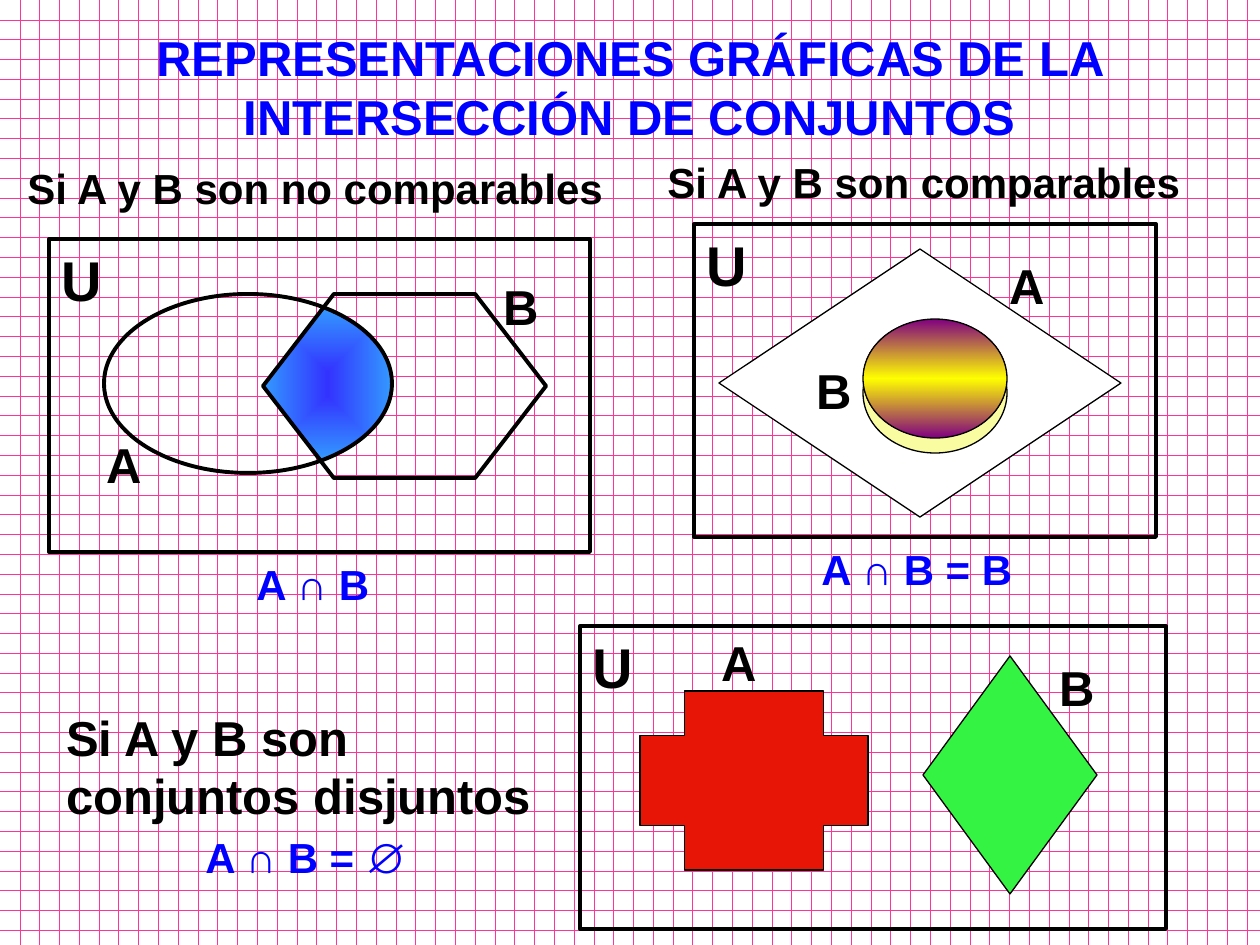
from dataclasses import dataclass
from math import cos, radians, sin

from pptx import Presentation
from pptx.dml.color import RGBColor
from pptx.enum.dml import MSO_PATTERN
from pptx.enum.shapes import MSO_SHAPE
from pptx.enum.text import MSO_ANCHOR, MSO_AUTO_SIZE, PP_ALIGN
from pptx.oxml import parse_xml
from pptx.oxml.ns import nsdecls, qn
from pptx.util import Emu, Pt

PX = 914400 / 126
TITLE_ONLY = 5
DOT_GRID = MSO_PATTERN.DOTTED_GRID
RECT, OVAL = MSO_SHAPE.RECTANGLE, MSO_SHAPE.OVAL
HEXAGON, DIAMOND, CROSS = MSO_SHAPE.HEXAGON, MSO_SHAPE.DIAMOND, MSO_SHAPE.CROSS
LEFT, CENTER = PP_ALIGN.LEFT, PP_ALIGN.CENTER
BLACK, BLUE, WHITE, PINK = "000000", "0000FF", "FFFFFF", "FF3399"
THIN, THICK = 0.75, 2.25
FROM_CENTER = ('<a:path path="rect"><a:fillToRect l="50000" t="50000" '
               'r="50000" b="50000"/></a:path>')
DOWNWARD = '<a:lin ang="5400000" scaled="1"/>'


@dataclass(frozen=True)
class Box:
    left: int
    top: int
    width: int
    height: int

    def emu(self) -> list[Emu]:
        return [px(v) for v in (self.left, self.top, self.width, self.height)]


@dataclass(frozen=True)
class Region:
    kind: MSO_SHAPE
    box: Box
    fill: str | None = None
    weight: float = THIN
    adjust: float | None = None


@dataclass(frozen=True)
class Caption:
    text: str
    box: Box
    size: int = 28
    color: str = BLACK


def px(value: float) -> Emu:
    return Emu(round(value * PX))


def rgb(value: str) -> RGBColor:
    return RGBColor.from_string(value)


def finish(shape, fill: str | None, weight: float) -> None:
    shape.shadow.inherit = False
    if fill:
        shape.fill.solid()
        shape.fill.fore_color.rgb = rgb(fill)
    else:
        shape.fill.background()
    shape.line.color.rgb = rgb(BLACK)
    shape.line.width = Pt(weight)


def draw_region(slide, region: Region):
    shape = slide.shapes.add_shape(region.kind, *region.box.emu())
    finish(shape, region.fill, region.weight)
    if region.adjust is not None:
        shape.adjustments[0] = region.adjust
    return shape


def shade(shape, stops: dict[int, str], direction: str) -> None:
    """Replace an empty fill with a gradient; stops map percent to colour."""
    marks = "".join(f'<a:gs pos="{at * 1000}"><a:srgbClr val="{color}"/></a:gs>'
                    for at, color in stops.items())
    gradient = parse_xml(f'<a:gradFill {nsdecls("a")} rotWithShape="1">'
                         f'<a:gsLst>{marks}</a:gsLst>{direction}</a:gradFill>')
    properties = shape._element.spPr
    properties.replace(properties.find(qn("a:noFill")), gradient)


def draw_intersection(slide, ellipse: Box, hexagon: Box) -> None:
    """Fill the part of the ellipse that lies inside the hexagon's left corner."""
    rx, ry = ellipse.width / 2, ellipse.height / 2
    cx, cy = ellipse.left + rx, ellipse.top + ry
    arc = [(cx + rx * cos(radians(a)), cy + ry * sin(radians(a)))
           for a in range(-58, 60, 3)]
    corner = (hexagon.left, hexagon.top + hexagon.height / 2)
    builder = slide.shapes.build_freeform(px(corner[0]), px(corner[1]))
    builder.add_line_segments([(px(x), px(y)) for x, y in arc], close=True)
    shape = builder.convert_to_shape()
    finish(shape, None, THIN)
    shade(shape, {0: "3333FF", 100: "3399FF"}, FROM_CENTER)


def write(shape, caption: Caption, alignment: PP_ALIGN = LEFT) -> None:
    frame = shape.text_frame
    frame.text = caption.text
    paragraph = frame.paragraphs[0]
    formats = {
        frame: {"word_wrap": True, "auto_size": MSO_AUTO_SIZE.SHAPE_TO_FIT_TEXT,
                "vertical_anchor": MSO_ANCHOR.TOP},
        paragraph: {"alignment": alignment},
        paragraph.runs[0].font: {"name": "Arial", "size": Pt(caption.size), "bold": True},
    }
    for target, values in formats.items():
        for name, value in values.items():
            setattr(target, name, value)
    paragraph.runs[0].font.color.rgb = rgb(caption.color)
    paragraph._p.get_or_add_pPr().insert(0, parse_xml(
        f'<a:spcBef {nsdecls("a")}><a:spcPct val="50000"/></a:spcBef>'))


def draw_caption(slide, caption: Caption) -> None:
    write(slide.shapes.add_textbox(*caption.box.emu()), caption)


TITLE = Caption("REPRESENTACIONES GRÁFICAS DE LA INTERSECCIÓN DE CONJUNTOS",
                Box(94, 21, 1071, 130), color=BLUE)
UNIVERSES = [Box(49, 239, 541, 313), Box(694, 224, 462, 313), Box(580, 626, 586, 303)]
ELLIPSE = Box(104, 294, 288, 179)
HEXAGON_BOX = Box(263, 294, 283, 184)
REGIONS = [
    Region(HEXAGON, HEXAGON_BOX, weight=THICK, adjust=0.385),
    Region(OVAL, ELLIPSE, weight=THICK),
    Region(DIAMOND, Box(719, 249, 402, 268), WHITE),
    Region(OVAL, Box(863, 333, 144, 120), "FAFCA2"),
    Region(CROSS, Box(640, 691, 228, 179), "E71505", adjust=0.25),
    Region(DIAMOND, Box(923, 656, 174, 238), "35F343"),
]
BALL = Region(OVAL, Box(863, 319, 144, 119))
CAPTIONS = [
    Caption("Si A y B son no comparables", Box(15, 156, 615, 63), 24),
    Caption("Si A y B son comparables", Box(655, 150, 556, 63), 24),
    Caption("Si A y B son conjuntos disjuntos", Box(54, 701, 501, 130)),
    Caption("A ∩ B", Box(244, 552, 151, 63), 24, BLUE),
    Caption("A ∩ B = B", Box(809, 537, 232, 64), 24, BLUE),
    Caption("A ∩ B = ∅", Box(193, 825, 228, 64), 24, BLUE),
]
SET_NAMES = [("A", 94, 428), ("B", 491, 270), ("A", 997, 249), ("B", 804, 354),
             ("A", 709, 626), ("B", 1047, 651)]


def main() -> None:
    deck = Presentation()
    deck.slide_width, deck.slide_height = px(1260), px(945)
    slide = deck.slides.add_slide(deck.slide_layouts[TITLE_ONLY])
    grid = slide.background.fill
    grid.patterned()
    grid.pattern = DOT_GRID
    grid.fore_color.rgb, grid.back_color.rgb = rgb(PINK), rgb(WHITE)

    title = slide.shapes.title
    title.left, title.top, title.width, title.height = TITLE.box.emu()
    write(title, TITLE, CENTER)

    draw_intersection(slide, ELLIPSE, HEXAGON_BOX)
    for universe in UNIVERSES:
        draw_region(slide, Region(RECT, universe, weight=THICK))
        draw_caption(slide, Caption("U", Box(universe.left, universe.top, 74, 79), 32))
    for region in REGIONS:
        draw_region(slide, region)
    shade(draw_region(slide, BALL), {0: "800080", 50: "FFFF00", 100: "800080"}, DOWNWARD)
    for caption in CAPTIONS:
        draw_caption(slide, caption)
    for name, left, top in SET_NAMES:
        draw_caption(slide, Caption(name, Box(left, top, 70, 72)))
    deck.save("out.pptx")


if __name__ == "__main__":
    main()
